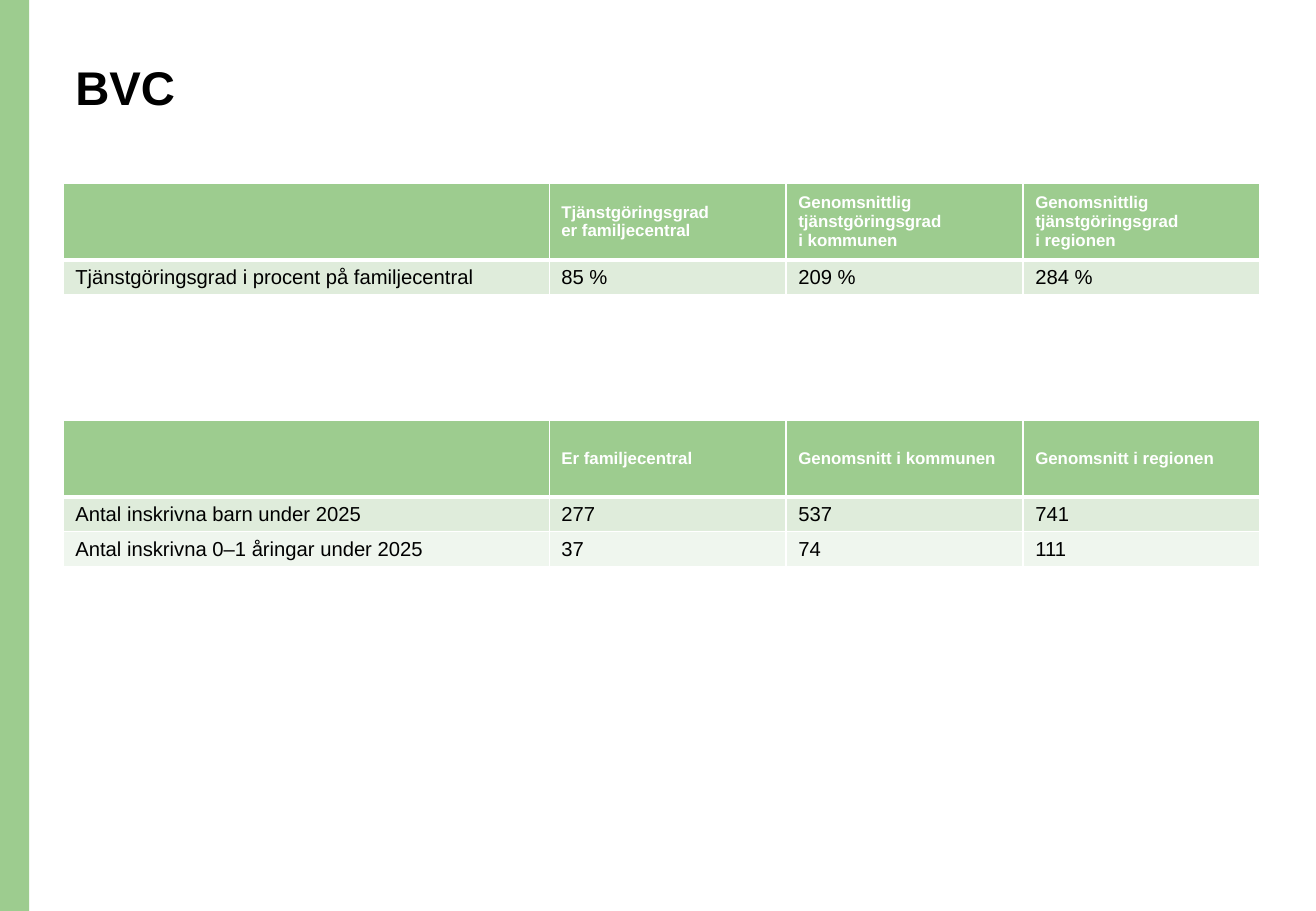
from lxml import etree
from pptx import Presentation
from pptx.dml.color import RGBColor
from pptx.enum.shapes import MSO_SHAPE
from pptx.enum.text import MSO_ANCHOR, MSO_AUTO_SIZE, PP_ALIGN
from pptx.oxml.ns import qn
from pptx.util import Emu, Pt

RECT = MSO_SHAPE.RECTANGLE
TOP, MIDDLE = MSO_ANCHOR.TOP, MSO_ANCHOR.MIDDLE
LEFT = PP_ALIGN.LEFT
NO_FIT = MSO_AUTO_SIZE.NONE
PX = 9144  # 100 px to the inch
FONT = "Arial"
COLORS = {
    "green": "9DCC8F",
    "band": "DFECDB",
    "pale": "EFF6EE",
    "white": "FFFFFF",
    "black": "000000",
}
WIDTHS = [400, 195, 195, 195]
HEAD_HIGH, ROW_HIGH = 63, 23


def px(*values):
    return [Emu(v * PX) for v in values]


class Page:
    def __init__(self, wide, high):
        self.deck = Presentation()
        self.deck.slide_width, self.deck.slide_height = px(wide, high)
        self.slide = self.deck.slides.add_slide(self.deck.slide_layouts[5])

    def paint(self, fill, color):
        fill.solid()
        fill.fore_color.rgb = RGBColor.from_string(COLORS[color])

    def text(self, para, words, size, color, bold):
        para.alignment = LEFT
        run = para.add_run()
        run.text = words
        font = run.font
        font.name, font.size, font.bold = FONT, Pt(size), bold
        font.color.rgb = RGBColor.from_string(COLORS[color])

    def bar(self, x, y, wide, high, color):
        shape = self.slide.shapes.add_shape(RECT, *px(x, y, wide, high))
        shape.shadow.inherit = False
        self.paint(shape.fill, color)
        shape.line.fill.background()

    def title(self, x, y, wide, high, words):
        shape = self.slide.shapes.title
        shape.left, shape.top, shape.width, shape.height = px(x, y, wide, high)
        frame = shape.text_frame
        frame.vertical_anchor = TOP
        frame.auto_size = NO_FIT
        para = frame.paragraphs[0]
        para.line_spacing = 0.9
        self.text(para, words, 28, "black", True)

    def border(self, cell, top, bottom):
        props = cell._tc.get_or_add_tcPr()
        sides = {"a:lnL": 1, "a:lnR": 1, "a:lnT": top, "a:lnB": bottom}
        for tag, points in sides.items():
            line = etree.SubElement(props, qn(tag), w=str(Pt(points)))
            fill = etree.SubElement(line, qn("a:solidFill"))
            etree.SubElement(fill, qn("a:srgbClr"), val=COLORS["white"])

    def cell(self, cell, lines, row):
        head = row == 0
        self.border(cell, 3 if row == 1 else 1, 3 if head else 1)
        self.paint(cell.fill, ("green", "band", "pale")[row])
        cell.vertical_anchor = MIDDLE
        style = (10, "white", True) if head else (12, "black", False)
        frame = cell.text_frame
        for i, line in enumerate(lines):
            para = frame.add_paragraph() if i else frame.paragraphs[0]
            self.text(para, line, *style)

    def table(self, x, y, rows):
        highs = [HEAD_HIGH] + [ROW_HIGH] * (len(rows) - 1)
        size = px(x, y, sum(WIDTHS), sum(highs))
        table = self.slide.shapes.add_table(len(rows), len(WIDTHS), *size).table
        for col, wide in zip(table.columns, px(*WIDTHS)):
            col.width = wide
        for r, (high, texts) in enumerate(zip(px(*highs), rows)):
            table.rows[r].height = high
            for c, words in enumerate(texts):
                self.cell(table.cell(r, c), words.split("\n") if words else [], r)


def main():
    page = Page(1083, 750)
    page.bar(0, 0, 24, 750, "green")
    page.title(52, 48, 934, 102, "BVC")
    page.table(52, 151, [
        ["", "Tjänstgöringsgrad\ner familjecentral",
         "Genomsnittlig tjänstgöringsgrad\ni kommunen",
         "Genomsnittlig tjänstgöringsgrad\ni regionen"],
        ["Tjänstgöringsgrad i procent på familjecentral", "85 %", "209 %", "284 %"],
    ])
    page.table(52, 346, [
        ["", "Er familjecentral", "Genomsnitt i kommunen", "Genomsnitt i regionen"],
        ["Antal inskrivna barn under 2025", "277", "537", "741"],
        ["Antal inskrivna 0–1 åringar under 2025", "37", "74", "111"],
    ])
    page.deck.save("out.pptx")


if __name__ == "__main__":
    main()
